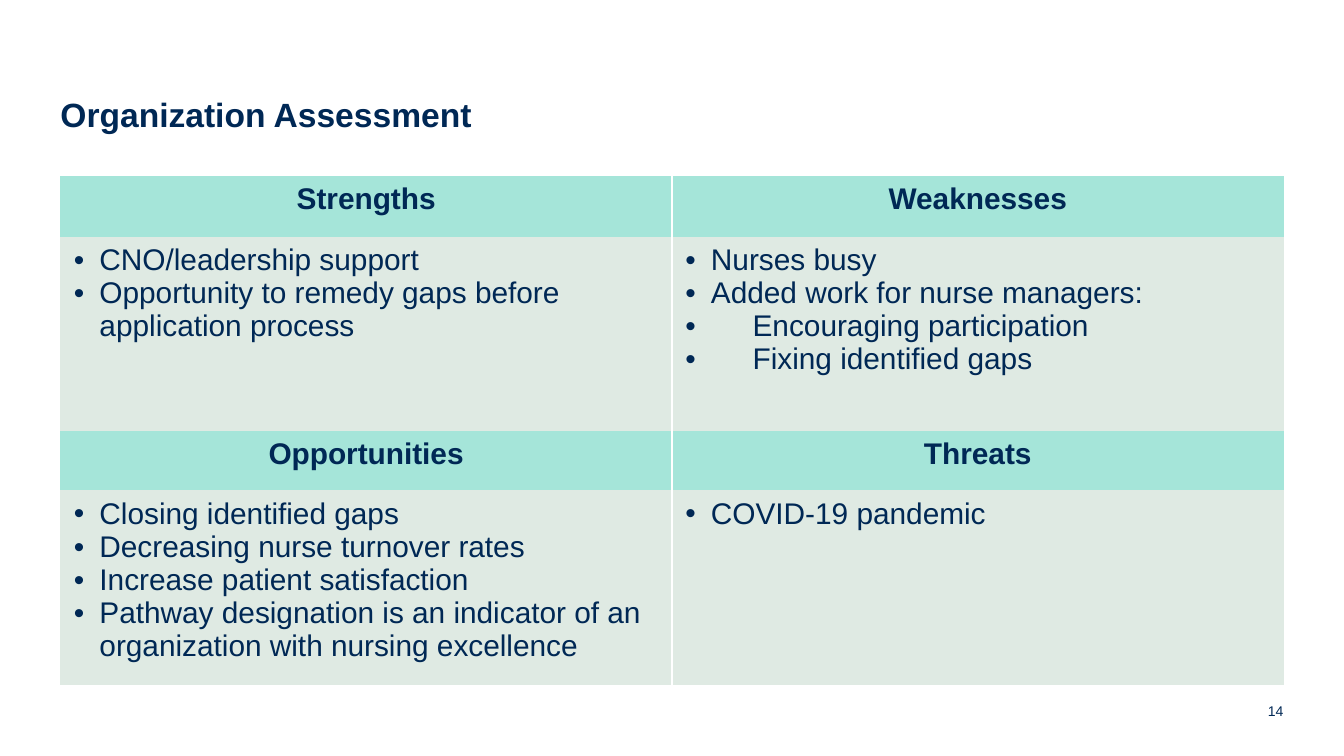
import pptx
import pptx.util
import pptx.dml.color
import pptx.enum.text
import pptx.oxml
import pptx.oxml.ns

Inches = pptx.util.Inches
ALIGN = pptx.enum.text.PP_ALIGN
ANCHOR = pptx.enum.text.MSO_ANCHOR
COLORS = {"navy": "002855", "mint": "A5E5D9", "sage": "DFEAE3", "white": "FFFFFF"}
SLIDE_WIDTH = 10
SLIDE_HEIGHT = SLIDE_WIDTH * 9 / 16
MARGIN = 0.45
CONTENT_WIDTH = SLIDE_WIDTH - 2 * MARGIN
ROW_HEIGHTS = [0.45, 1.45, 0.44, 1.45]
NO_STYLE = "{2D5ABB26-0587-4C30-8999-92F81FD0307C}"
NAMESPACE = pptx.oxml.ns.nsdecls("a")


def format_text(paragraph, size, bold, alignment):
    paragraph.alignment = alignment
    values = {"name": "Arial", "size": pptx.util.Pt(size), "bold": bold}
    for name, value in values.items():
        setattr(paragraph.font, name, value)
    paragraph.font.color.rgb = pptx.dml.color.RGBColor.from_string(COLORS["navy"])


def place_text(shape, box, text, size, bold, alignment, anchor):
    for name, value in zip(("left", "top", "width", "height"), box):
        setattr(shape, name, Inches(value))
    frame = shape.text_frame
    values = {"margin_left": 0, "margin_top": 0, "margin_right": 0, "margin_bottom": 0,
              "word_wrap": True, "vertical_anchor": anchor, "text": text}
    for name, value in values.items():
        setattr(frame, name, value)
    format_text(frame.paragraphs[0], size, bold, alignment)


presentation = pptx.Presentation()
presentation.slide_width = Inches(SLIDE_WIDTH)
presentation.slide_height = Inches(SLIDE_HEIGHT)
slide = presentation.slides.add_slide(presentation.slide_layouts[5])

place_text(slide.shapes.title, (MARGIN, 0.7, CONTENT_WIDTH, 0.7),
           "Organization Assessment", 18, True, ALIGN.LEFT, ANCHOR.TOP)

quadrants = [
    [
        ("Strengths", [("CNO/leadership support", 0.19),
                       ("Opportunity to remedy gaps before application process", 0.19)]),
        ("Weaknesses", [("Nurses busy", 0.19),
                        ("Added work for nurse managers:", 0.19),
                        ("Encouraging participation", 0.5),
                        ("Fixing identified gaps", 0.5)]),
    ],
    [
        ("Opportunities", [("Closing identified gaps", 0.19),
                           ("Decreasing nurse turnover rates", 0.19),
                           ("Increase patient satisfaction", 0.19),
                           ("Pathway designation is an indicator of an organization "
                            "with nursing excellence", 0.19)]),
        ("Threats", [("COVID-19 pandemic", 0.19)]),
    ],
]

table_frame = slide.shapes.add_table(
    4, 2, Inches(MARGIN), Inches(1.31), Inches(CONTENT_WIDTH), Inches(sum(ROW_HEIGHTS)))
table = table_frame.table
table._tbl.tblPr.find(pptx.oxml.ns.qn("a:tableStyleId")).text = NO_STYLE
for row, height in zip(table.rows, ROW_HEIGHTS):
    row.height = Inches(height)

for band, pair in enumerate(quadrants):
    for column, (heading, points) in enumerate(pair):
        header = table.cell(2 * band, column)
        body = table.cell(2 * band + 1, column)
        for cell, fill in ((header, "mint"), (body, "sage")):
            cell.fill.solid()
            cell.fill.fore_color.rgb = pptx.dml.color.RGBColor.from_string(COLORS[fill])
            side = "lnL" if column else "lnR"
            border = pptx.oxml.parse_xml(
                f'<a:{side} {NAMESPACE} w="12700"><a:solidFill>'
                f'<a:srgbClr val="{COLORS["white"]}"/></a:solidFill></a:{side}>')
            cell._tc.get_or_add_tcPr().insert(0, border)
        header.text = heading
        format_text(header.text_frame.paragraphs[0], 16, True, ALIGN.CENTER)
        body.text = "\n".join(text for text, indent in points)
        for paragraph, (text, indent) in zip(body.text_frame.paragraphs, points):
            properties = paragraph._p.get_or_add_pPr()
            properties.set("marL", str(Inches(indent)))
            properties.set("indent", str(-Inches(indent)))
            properties.append(pptx.oxml.parse_xml(f'<a:buFont {NAMESPACE} typeface="Arial"/>'))
            properties.append(pptx.oxml.parse_xml(f'<a:buChar {NAMESPACE} char="•"/>'))
            format_text(paragraph, 16, False, ALIGN.LEFT)

number_box = slide.shapes.add_textbox(0, 0, 0, 0)
place_text(number_box, (9.25, 5.2, 0.3, 0.15), "14", 7.5, False, ALIGN.RIGHT, ANCHOR.BOTTOM)

presentation.save("out.pptx")
